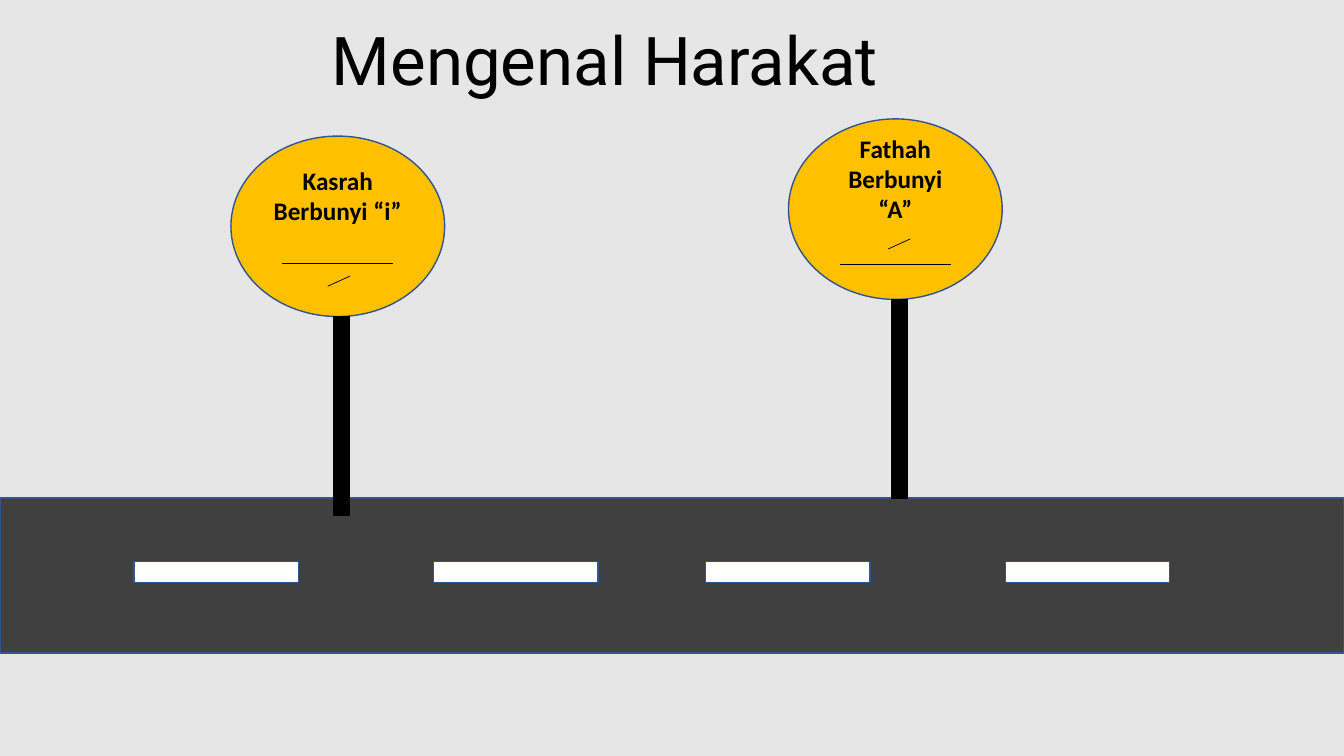
import pptx
import pptx.util
import pptx.dml.color
import pptx.enum.shapes
import pptx.enum.text
import pptx.oxml.ns
import lxml.etree
from dataclasses import dataclass

Inches = pptx.util.Inches
SHAPE = pptx.enum.shapes.MSO_SHAPE
ALIGN = pptx.enum.text.PP_ALIGN
ANCHOR = pptx.enum.text.MSO_ANCHOR

TITLE = "Mengenal Harakat"
# Tick offsets are the right end of the short stroke, measured from the sign.
SIGNS = [
    {"lines": ["Fathah", "Berbunyi “A”"], "at": (7.82, 1.18), "bar": 1.44, "tick": (1.21, 1.19)},
    {"lines": ["Kasrah", "Berbunyi “i”"], "at": (2.29, 1.35), "bar": 1.26, "tick": (1.18, 1.39)},
]
DASH_LEFTS = [1.33, 4.3, 7, 9.97]


@dataclass(frozen=True)
class Theme:
    background: str = "E7E6E6"
    road: str = "404040"
    dash: str = "FFFFFF"
    sign: str = "FFC000"
    outline: str = "325491"
    ink: str = "000000"
    title_font: str = "Roboto"
    sign_font: str = "Calibri"
    title_size: int = 48
    sign_size: int = 18
    edge: float = 1
    stroke: float = 0.5


THEME = Theme()


def rgb(value):
    return pptx.dml.color.RGBColor.from_string(value)


def write(sp, lines, *, font, size, bold=False, align=ALIGN.LEFT, anchor=ANCHOR.TOP,
          top=0.05, bottom=0.05):
    tf = sp.text_frame
    tf.word_wrap = True
    tf.vertical_anchor = anchor
    tf.margin_left = tf.margin_right = Inches(0.1)
    tf.margin_top, tf.margin_bottom = Inches(top), Inches(bottom)
    for i, text in enumerate(lines):
        p = tf.add_paragraph() if i else tf.paragraphs[0]
        p.alignment = align
        p.line_spacing = 1.0
        p.space_before = pptx.util.Pt(0)
        r = p.add_run()
        r.text = text
        r.font.name, r.font.size, r.font.bold = font, pptx.util.Pt(size), bold
        r.font.color.rgb = rgb(THEME.ink)


def add_shape(shapes, kind, box, fill, outline=THEME.outline):
    sp = shapes.add_shape(kind, *map(Inches, box))
    sp.shadow.inherit = False
    sp.fill.solid()
    sp.fill.fore_color.rgb = rgb(fill)
    sp.line.color.rgb = rgb(outline)
    sp.line.width = pptx.util.Pt(THEME.edge)
    return sp


def add_line(shapes, *ends):
    line = shapes.add_connector(pptx.enum.shapes.MSO_CONNECTOR.STRAIGHT, *map(Inches, ends))
    line.line.color.rgb = rgb(THEME.ink)
    line.line.width = pptx.util.Pt(THEME.stroke)
    lxml.etree.SubElement(line._element.spPr, pptx.oxml.ns.qn("a:effectLst"))


def add_title(s):
    sp = s.shapes.title
    sp.left, sp.top, sp.width, sp.height = map(Inches, (3.19, 0.13, 6.96, 0.91))
    write(sp, [TITLE], font=THEME.title_font, size=THEME.title_size)


def add_road(s):
    shapes = s.shapes.add_group_shape().shapes
    add_shape(shapes, SHAPE.RECTANGLE, (0, 4.94, 13.33, 1.54), THEME.road)
    for left in DASH_LEFTS:
        add_shape(shapes, SHAPE.RECTANGLE, (left, 5.57, 1.63, 0.21), THEME.dash)


def add_sign(s, sign):
    """Draw a round sign with its harakat mark and pole as one group."""
    shapes = s.shapes.add_group_shape().shapes
    x, y = sign["at"]
    width, height = 2.12, 1.79
    sp = add_shape(shapes, SHAPE.OVAL, (x, y, width, height), THEME.sign)
    write(sp, sign["lines"], font=THEME.sign_font, size=THEME.sign_size, bold=True,
          align=ALIGN.CENTER, anchor=ANCHOR.MIDDLE, top=0, bottom=0.61)
    bar_y = y + sign["bar"]
    add_line(shapes, x + 0.51, bar_y, x + 1.61, bar_y)
    tick_x, tick_y = x + sign["tick"][0], y + sign["tick"][1]
    add_line(shapes, tick_x, tick_y, tick_x - 0.22, tick_y + 0.1)
    add_shape(shapes, SHAPE.RECTANGLE, (x + 1.02, y + height, 0.16, 1.97),
              THEME.ink, THEME.ink)


def main():
    prs = pptx.Presentation()
    prs.slide_width, prs.slide_height = Inches(13.33), Inches(7.5)
    s = prs.slides.add_slide(prs.slide_layouts[5])
    s.background.fill.solid()
    s.background.fill.fore_color.rgb = rgb(THEME.background)
    add_title(s)
    add_road(s)
    for sign in SIGNS:
        add_sign(s, sign)
    prs.save("out.pptx")


if __name__ == "__main__":
    main()
